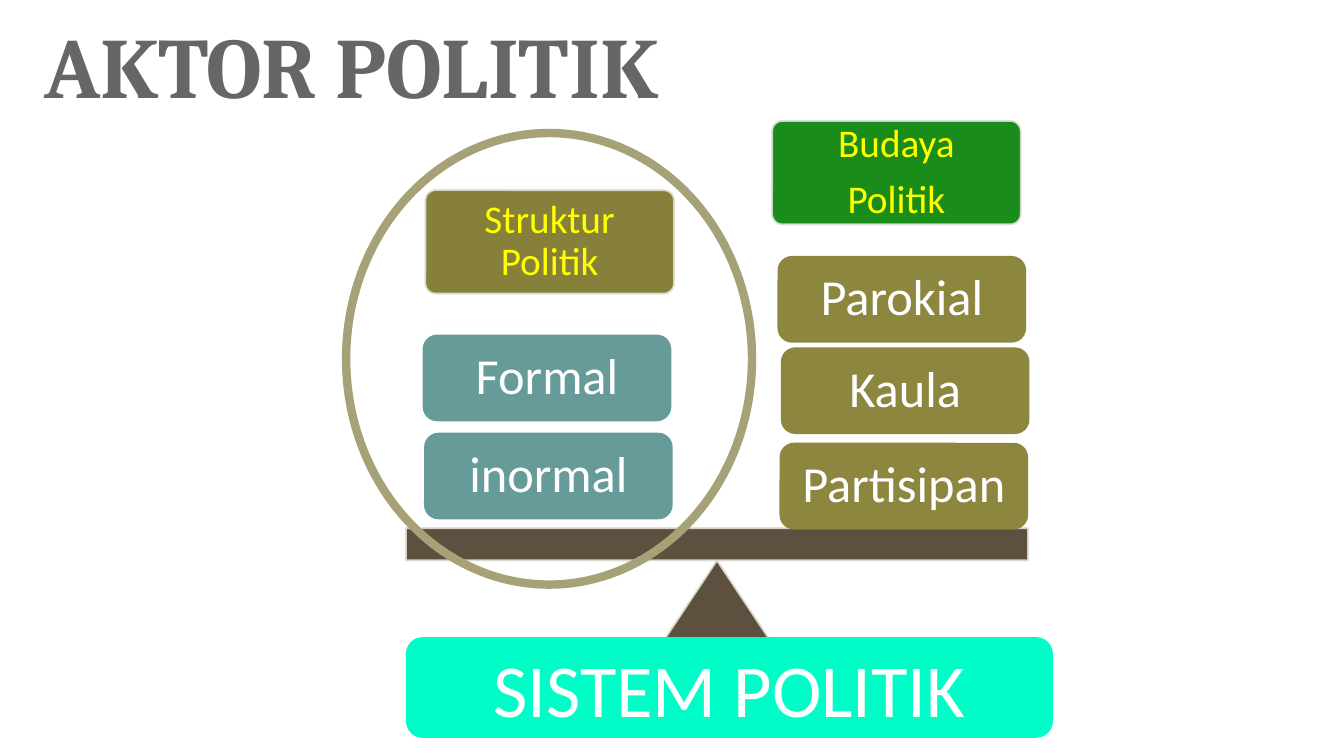
from lxml.etree import SubElement as Sub
from pptx import Presentation
from pptx.dml.color import RGBColor
from pptx.enum.shapes import MSO_SHAPE as Kind
from pptx.enum.text import MSO_ANCHOR as Anchor, PP_ALIGN as Align
from pptx.oxml.ns import qn
from pptx.util import Pt

PX = 4572
EDGE = "DFDED5"
BROWN = "5E503E"
OLIVE = "8C863E"
TEAL = "679B9A"


def px(n):
    return int(n * PX)


def paint(color, tone, alpha=100):
    color.rgb = RGBColor.from_string(tone)
    if alpha < 100:
        node = color._xFill.find(qn("a:srgbClr"))
        Sub(node, qn("a:alpha")).set("val", str(alpha * 1000))


def write(shape, lines, size, tone, pad, font="Calibri", bold=False,
          align=Align.CENTER, lead=0.9, gap=0):
    frame = shape.text_frame
    form = {"word_wrap": True, "vertical_anchor": Anchor.MIDDLE,
            "margin_left": px(pad[0]), "margin_right": px(pad[0]),
            "margin_top": px(pad[1]), "margin_bottom": px(pad[1])}
    for name, value in form.items():
        setattr(frame, name, value)
    for i, line in enumerate(lines):
        para = frame.add_paragraph() if i else frame.paragraphs[0]
        para.alignment = align
        para.line_spacing = lead
        if i:
            para.space_before = Pt(gap)
        run = para.add_run()
        run.text = line
        for name, value in {"size": Pt(size), "name": font, "bold": bold}.items():
            setattr(run.font, name, value)
        paint(run.font.color, tone)


def draw(slide, kind, box, fill=None, line=None, width=1, alpha=100, fade=100, curve=None):
    shape = slide.shapes.add_shape(kind, *map(px, box))
    shape.shadow.inherit = False
    if curve:
        shape.adjustments[0] = curve
    if fill:
        shape.fill.solid()
        paint(shape.fill.fore_color, fill, alpha)
    else:
        shape.fill.background()
    if line:
        shape.line.width = Pt(width)
        shape.line.fill.solid()
        paint(shape.line.color, line, fade)
    else:
        shape.line.fill.background()
    return shape


def title(slide, box, text):
    shape = slide.shapes.add_textbox(*map(px, box))
    write(shape, [text], 46, "666666", (20, 10), "Cambria", True, Align.LEFT, 1)


def head(slide, box, lines, fill):
    shape = draw(slide, Kind.ROUNDED_RECTANGLE, box, fill, EDGE, alpha=90, fade=90, curve=0.1)
    write(shape, lines, 21, "FFFF00", (18, 18), gap=7.3)


def stack(slide, box, items, fill):
    left, top, wide, high = box
    for text, dx, dy in items:
        shape = draw(slide, Kind.ROUNDED_RECTANGLE, (left + dx, top + dy, wide, high),
                     fill, curve=0.167)
        write(shape, [text], 27, "FFFFFF", (22, 22))


def scale(slide, box):
    left, top, wide, high = box
    beam, foot = 48, 154
    draw(slide, Kind.ISOSCELES_TRIANGLE,
         (left + (wide - foot) / 2, top + beam, foot, high - beam), BROWN, EDGE, fade=90)
    draw(slide, Kind.RECTANGLE, (left, top, wide, beam), BROWN, EDGE, fade=90)


def base(slide, box, text):
    shape = draw(slide, Kind.ROUNDED_RECTANGLE, box, "00FDC8", curve=0.167)
    write(shape, [text], 40, "FFFFFF", (20, 10), lead=1)


def main():
    deck = Presentation()
    deck.slide_width, deck.slide_height = px(2000), px(1125)
    slide = deck.slides.add_slide(deck.slide_layouts[6])
    head(slide, (633, 283, 370, 154), ["Struktur Politik"], "797325")
    head(slide, (1149, 180, 370, 154), ["Budaya", "Politik"], "008000")
    scale(slide, (604, 786, 926, 164))
    stack(slide, (1157, 381, 370, 129),
          [("Partisipan", 3, 278), ("Kaula", 5, 136), ("Parokial", 0, 0)], OLIVE)
    stack(slide, (629, 498, 370, 129), [("inormal", 2, 146), ("Formal", 0, 0)], TEAL)
    base(slide, (604, 948, 963, 150), "SISTEM POLITIK")
    title(slide, (46, 36, 1424, 120), "AKTOR POLITIK")
    draw(slide, Kind.OVAL, (515, 198, 604, 672), line="A6A177", width=4.5)
    deck.save("out.pptx")


if __name__ == "__main__":
    main()
